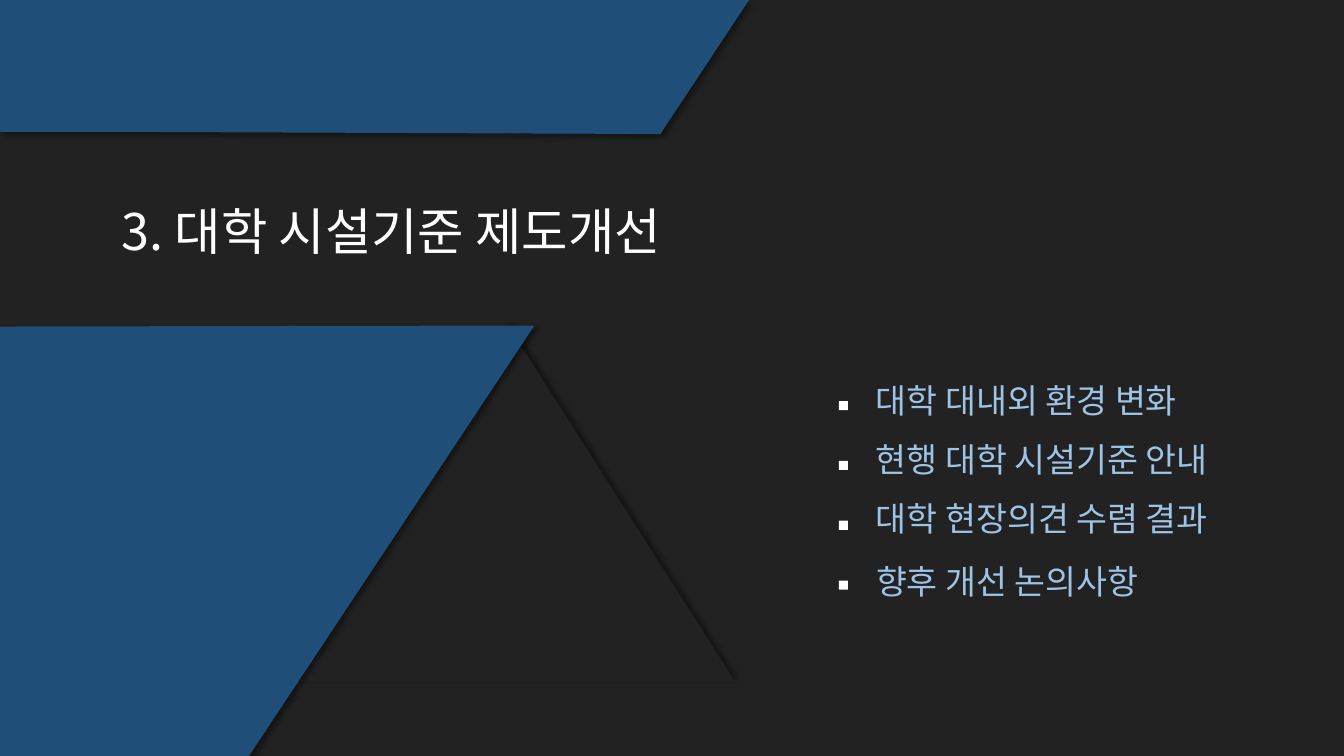
"""Build the section slide on university facility standards."""
from lxml import etree
from pptx import Presentation, util as u
from pptx.dml.color import RGBColor
from pptx.enum import shapes, text
from pptx.oxml import ns


class Deck:
    font = "Noto Sans CJK KR"
    hues = {"dark": "222222", "blue": "1F4E79", "sky": "9DC3E6",
            "white": "FFFFFF", "black": "000000"}

    def __init__(self):
        self.prs = Presentation()
        self.prs.slide_width = u.Inches(13.33)
        self.prs.slide_height = u.Inches(7.5)
        self.slide = self.prs.slides.add_slide(self.prs.slide_layouts[6])
        self.paint(self.slide.background.fill, "dark")

    def hue(self, name):
        return RGBColor.from_string(self.hues[name])

    def paint(self, fill, name):
        fill.solid()
        fill.fore_color.rgb = self.hue(name)

    def dress(self, shape, hue, angle=None):
        self.paint(shape.fill, hue)
        shape.line.fill.background()
        shape.shadow.inherit = False
        if angle is not None:
            effects = shape._element.spPr.find(ns.qn("a:effectLst"))
            outer = etree.SubElement(
                effects, ns.qn("a:outerShdw"), blurRad=str(u.Pt(4)),
                dist=str(u.Pt(3)), dir=str(angle * 60000),
                algn="tl", rotWithShape="0")
            tint = etree.SubElement(outer, ns.qn("a:srgbClr"),
                                    val=self.hues["black"])
            etree.SubElement(tint, ns.qn("a:alpha"), val="40000")

    def shape(self, kind, box, hue, angle=None):
        item = self.slide.shapes.add_shape(kind, *map(u.Inches, box))
        self.dress(item, hue, angle)

    def band(self, points, hue, angle):
        spots = [(u.Inches(x), u.Inches(y)) for x, y in points]
        pen = self.slide.shapes.build_freeform(*spots[0])
        pen.add_line_segments(spots[1:], close=True)
        self.dress(pen.convert_to_shape(), hue, angle)

    def label(self, words, box, size, hue, align, wrap):
        item = self.slide.shapes.add_textbox(*map(u.Inches, box))
        frame = item.text_frame
        frame.word_wrap = wrap
        frame.auto_size = text.MSO_AUTO_SIZE.SHAPE_TO_FIT_TEXT
        para = frame.paragraphs[0]
        para.text = words
        para.alignment = align
        font = para.font
        font.name, font.size = self.font, u.Pt(size)
        font.color.rgb = self.hue(hue)
        etree.SubElement(font._element, ns.qn("a:ea"), typeface=self.font)


def main():
    deck = Deck()
    kind, align = shapes.MSO_SHAPE, text.PP_ALIGN
    deck.shape(kind.ISOSCELES_TRIANGLE, (2.79, 3.23, 4.5, 3.53), "dark", 315)
    deck.band([(0, 0), (7.43, 0), (6.55, 1.33), (1.55, 1.31), (0, 1.31)],
              "blue", 45)
    deck.band([(0, 3.24), (5.3, 3.23), (2.47, 7.5), (0, 7.5)], "blue", 45)
    deck.label("3. 대학 시설기준 제도개선", (0.34, 1.94, 7.08, 0.71),
               36, "white", align.CENTER, True)
    topics = [("대학 대내외 환경 변화", 3.72, 3.57),
              ("현행 대학 시설기준 안내", 4.31, 3.9),
              ("대학 현장의견 수렴 결과", 4.89, 3.9),
              ("향후 개선 논의사항", 5.52, 3.12)]
    for row, (words, top, width) in enumerate(topics):
        deck.label(words, (8.59, top, width, 0.5), 24, "sky",
                   align.LEFT, False)
        deck.shape(kind.RECTANGLE, (8.32, 3.98 + 0.593 * row, 0.09, 0.09),
                   "white")
    deck.prs.save("out.pptx")


if __name__ == "__main__":
    main()
